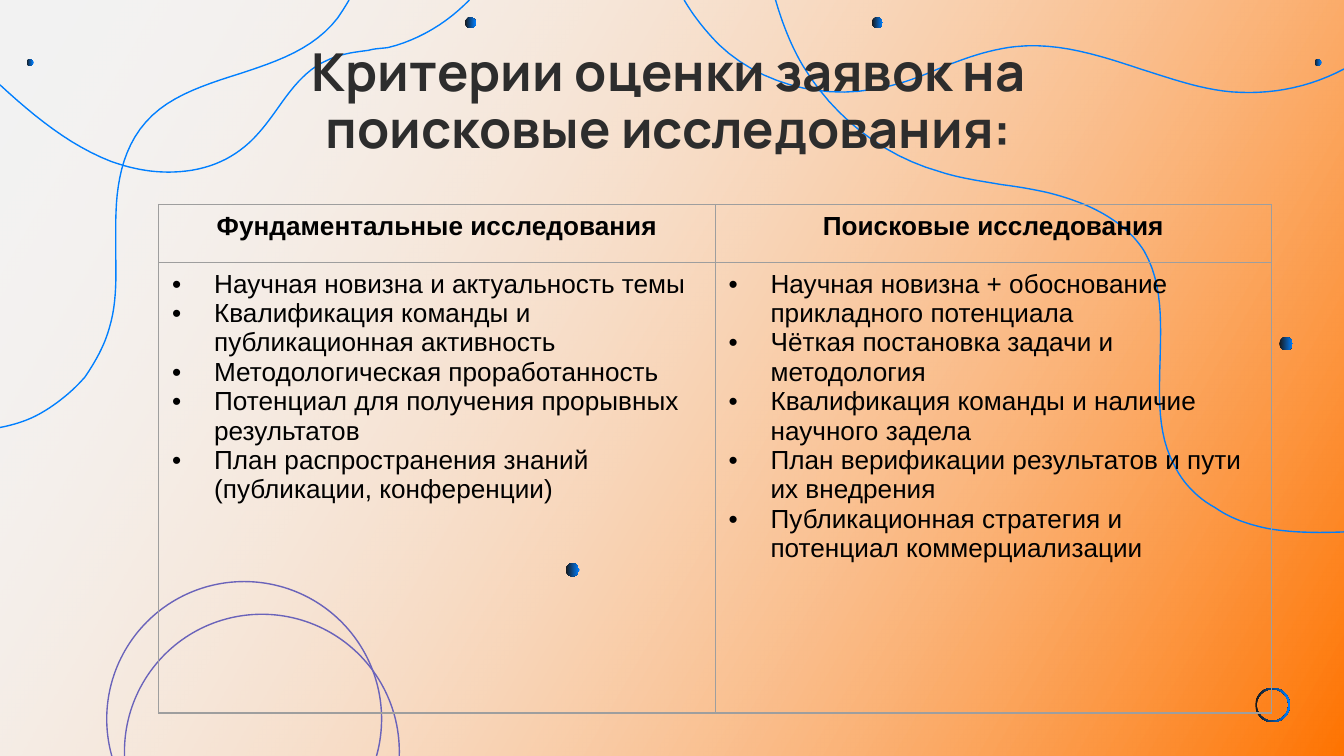
from dataclasses import dataclass

from lxml.etree import SubElement
from pptx import Presentation
from pptx.dml.color import RGBColor
from pptx.enum.shapes import MSO_SHAPE
from pptx.enum.text import MSO_ANCHOR, PP_ALIGN
from pptx.oxml.ns import qn
from pptx.util import Pt


@dataclass(frozen=True)
class Theme:
    paper: str = "F2F2F2"
    white: str = "FFFFFF"
    orange: str = "FF7401"
    blue: str = "007FFF"
    dark: str = "161616"
    violet: str = "6A63BA"
    title: str = "2D2D2D"
    text: str = "000000"
    grid: str = "9E9E9E"
    head_font: str = "Manrope"
    body_font: str = "Arial"
    head_size: float = 28
    body_size: float = 14
    thin: float = 0.75


THEME = Theme()

# Each wave: a start point, then three points for every Bezier segment.
WAVES = [
    [(366.5, 0), (371.5, 8.6), (378, 16.6), (385, 23.8), (406, 44), (438, 53),
     (467, 48), (480, 46), (491, 42), (502.5, 37), (516, 31.5), (530, 26.5),
     (544, 25), (567, 22.5), (590, 30), (611, 37), (628.5, 42.5), (646.5, 49),
     (664.5, 49.5), (684, 50.3), (703, 46), (720, 37)],
    [(415.5, 0), (419, 12), (423.5, 24), (430, 35), (446.5, 62.5), (473, 83.5),
     (503.5, 92), (514, 95.5), (525.5, 97), (537, 99), (545, 100), (554, 101.5),
     (562.5, 103.5), (574, 106.5), (583, 110), (591, 114.5), (600.5, 120),
     (608, 126.5), (613, 134.6), (623, 152), (622, 173), (621.5, 193),
     (621, 212.5), (620, 232.5), (629, 249), (633.5, 258.5), (641, 266.5),
     (651, 272), (659.5, 278), (670, 281.5), (681, 283.5), (694, 285.5),
     (707, 285.5), (720, 285)],
    [(187, 0), (185, 3.5), (183, 6.5), (181, 9.5), (168.5, 26), (148.5, 33),
     (128, 39.6), (108, 46), (87, 52.5), (75, 69.3), (63.5, 85), (62, 105),
     (62, 122), (62, 125), (62, 129), (62, 132.5), (62, 147), (63, 161),
     (58.5, 176), (56, 185), (51, 194), (45.5, 202), (39, 209.5), (31, 216),
     (22.5, 221), (15.8, 225), (8, 227.5), (0, 229)],
    [(251.5, 0), (240, 12), (224.5, 21.5), (208, 25.5), (204.5, 26), (201, 26),
     (197.5, 27), (189.5, 28), (182, 29), (175, 32.5), (163.5, 37.5),
     (155.5, 48.5), (148.5, 58.5), (143.5, 65.5), (138, 73), (131, 78.7),
     (121.5, 86.5), (110, 91), (96.5, 92), (84, 93), (72, 91), (59.5, 86.5),
     (37.5, 78), (18.5, 62.5), (0, 45.5)],
]
# Centre x, centre y, diameter
DOTS = [(306.7, 305.3, 7.2), (252, 12.2, 5.8), (16, 33.5, 3.6),
        (689, 184.2, 7.2), (470, 12.2, 5.8), (706, 33.5, 3.6)]

TITLE = "Критерии оценки заявок на поисковые исследования:"
COLUMNS = {
    "Фундаментальные исследования": [
        "Научная новизна и актуальность темы",
        "Квалификация команды и публикационная активность",
        "Методологическая проработанность",
        "Потенциал для получения прорывных результатов",
        "План распространения знаний (публикации, конференции)",
    ],
    "Поисковые исследования": [
        "Научная новизна + обоснование прикладного потенциала",
        "Чёткая постановка задачи и методология",
        "Квалификация команды и наличие научного задела",
        "План верификации результатов и пути их внедрения",
        "Публикационная стратегия и потенциал коммерциализации",
    ],
}


def rgb(code):
    return RGBColor.from_string(code)


def blend(fill, first, last, angle=0):
    fill.gradient()
    fill.gradient_angle = angle
    for stop, code in zip(fill.gradient_stops, (first, last)):
        stop.color.rgb = rgb(code)


def add_plain(slide, kind, left, top, width, height):
    """Add a preset shape with no line and no shadow."""
    shape = slide.shapes.add_shape(kind, Pt(left), Pt(top), Pt(width), Pt(height))
    shape.shadow.inherit = False
    shape.line.fill.background()
    return shape


def add_glow(slide):
    """Cover the slide with a gradient that starts fully clear."""
    glow = add_plain(slide, MSO_SHAPE.RECTANGLE, -5, 0, 725, 405)
    blend(glow.fill, THEME.white, THEME.orange, 330)
    first = next(glow._element.spPr.iter(qn("a:srgbClr")))
    SubElement(first, qn("a:alpha"), val="0")


def add_round(slide, kind, mid_x, mid_y, size):
    return add_plain(slide, kind, mid_x - size / 2, mid_y - size / 2, size, size)


def add_ring(slide, mid_x, mid_y, size):
    ring = add_round(slide, MSO_SHAPE.DONUT, mid_x, mid_y, size)
    ring.adjustments[0] = THEME.thin / size
    return ring


def bezier(points, steps=12):
    """Return the points along a chain of cubic segments."""
    path = [points[0]]
    for i in range(0, len(points) - 1, 3):
        quad = points[i:i + 4]
        for step in range(1, steps + 1):
            t = step / steps
            u = 1 - t
            parts = (u ** 3, 3 * u * u * t, 3 * u * t * t, t ** 3)
            path.append(tuple(sum(k * p[axis] for k, p in zip(parts, quad))
                              for axis in (0, 1)))
    return path


def add_wave(slide, points):
    path = [(Pt(x), Pt(y)) for x, y in bezier(points)]
    pen = slide.shapes.build_freeform(*path[0])
    pen.add_line_segments(path[1:], close=False)
    wave = pen.convert_to_shape()
    wave.shadow.inherit = False
    wave.fill.background()
    wave.line.color.rgb = rgb(THEME.blue)
    wave.line.width = Pt(THEME.thin)


def style(para, font, size, color, bold=False):
    for run in para.runs:
        run.font.name = font
        run.font.size = Pt(size)
        run.font.bold = bold
        run.font.color.rgb = rgb(color)


def add_title(slide):
    box = slide.shapes.add_textbox(Pt(122.4), Pt(26), Pt(471.6), Pt(58.3))
    frame = box.text_frame
    frame.word_wrap = True
    frame.vertical_anchor = MSO_ANCHOR.MIDDLE
    frame.margin_left = frame.margin_right = Pt(7.2)
    frame.margin_top = frame.margin_bottom = Pt(7.2)
    frame.text = TITLE
    para = frame.paragraphs[0]
    para.alignment = PP_ALIGN.CENTER
    para.line_spacing = 0.9
    style(para, THEME.head_font, THEME.head_size, THEME.title, True)


def add_bullet(para):
    props = para._p.get_or_add_pPr()
    props.set("marL", str(Pt(22.5)))
    props.set("indent", str(-Pt(22.5)))
    tint = SubElement(props, qn("a:buClr"))
    SubElement(tint, qn("a:srgbClr"), val=THEME.text)
    SubElement(props, qn("a:buFont"), typeface=THEME.body_font)
    SubElement(props, qn("a:buChar"), char="•")


def frame_cell(cell):
    """Give the cell thin borders and no fill."""
    props = cell._tc.get_or_add_tcPr()
    for side in ("lnL", "lnR", "lnT", "lnB"):
        line = SubElement(props, qn(f"a:{side}"), w=str(Pt(THEME.thin)))
        solid = SubElement(line, qn("a:solidFill"))
        SubElement(solid, qn("a:srgbClr"), val=THEME.grid)
    cell.fill.background()


def add_grid(slide):
    table = slide.shapes.add_table(2, len(COLUMNS), Pt(85), Pt(109.6),
                                   Pt(596.2), Pt(272.4)).table
    table.first_row = table.horz_banding = False
    table.rows[0].height, table.rows[1].height = Pt(31.2), Pt(241.2)
    for col, (head, items) in enumerate(COLUMNS.items()):
        top, body = table.cell(0, col), table.cell(1, col)
        top.text_frame.text = head
        top.text_frame.paragraphs[0].alignment = PP_ALIGN.CENTER
        body.text_frame.text = "\n".join(items)
        for para in body.text_frame.paragraphs:
            add_bullet(para)
        for cell in (top, body):
            frame_cell(cell)
            for para in cell.text_frame.paragraphs:
                style(para, THEME.body_font, THEME.body_size, THEME.text, cell is top)


def main():
    deck = Presentation()
    deck.slide_width, deck.slide_height = Pt(720), Pt(405)
    slide = deck.slides.add_slide(deck.slide_layouts[6])
    slide.background.fill.solid()
    slide.background.fill.fore_color.rgb = rgb(THEME.paper)
    add_glow(slide)
    for mid_x, mid_y in ((140.3, 402.7), (130.8, 385.2)):
        ring = add_ring(slide, mid_x, mid_y, 148)
        ring.fill.solid()
        ring.fill.fore_color.rgb = rgb(THEME.violet)
    for points in WAVES:
        add_wave(slide, points)
    blend(add_ring(slide, 681.7, 377.7, 18.5).fill, THEME.dark, THEME.blue)
    for dot in DOTS:
        blend(add_round(slide, MSO_SHAPE.OVAL, *dot).fill, THEME.dark, THEME.blue)
    add_title(slide)
    add_grid(slide)
    deck.save("out.pptx")


if __name__ == "__main__":
    main()
